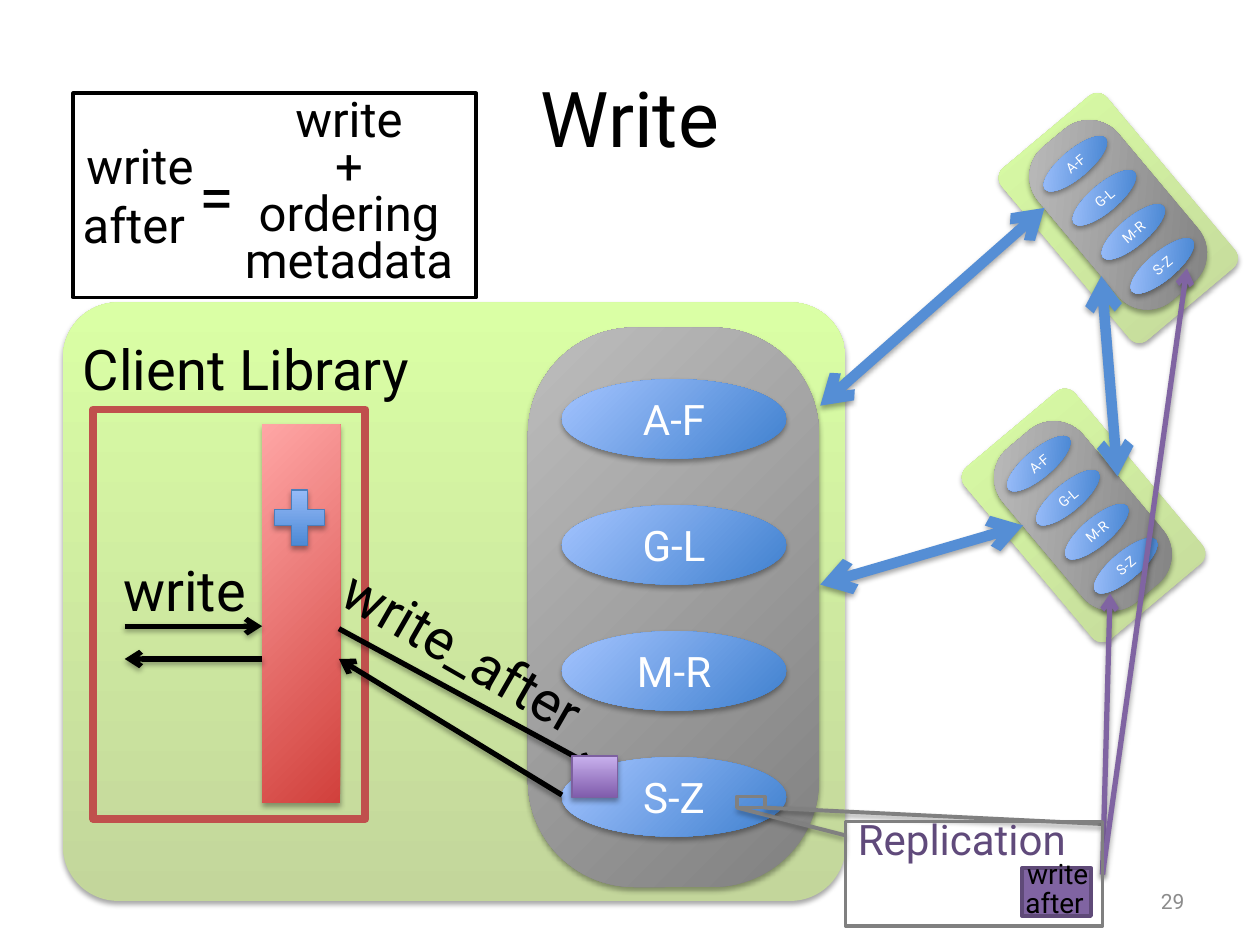
from dataclasses import dataclass

from lxml import etree
from pptx import Presentation
from pptx.dml.color import RGBColor
from pptx.enum.shapes import MSO_CONNECTOR, MSO_SHAPE
from pptx.enum.text import MSO_ANCHOR, PP_ALIGN
from pptx.oxml.ns import qn
from pptx.util import Inches, Pt

RECTANGLE, ROUNDED = MSO_SHAPE.RECTANGLE, MSO_SHAPE.ROUNDED_RECTANGLE
OVAL, PLUS = MSO_SHAPE.OVAL, MSO_SHAPE.MATH_PLUS
STRAIGHT = MSO_CONNECTOR.STRAIGHT
LEFT, CENTER, RIGHT = PP_ALIGN.LEFT, PP_ALIGN.CENTER, PP_ALIGN.RIGHT
TOP, MIDDLE = MSO_ANCHOR.TOP, MSO_ANCHOR.MIDDLE


@dataclass(frozen=True)
class Theme:
    font: str = "Roboto"
    black: str = "000000"
    white: str = "FFFFFF"
    page_gray: str = "8C8C8C"
    callout_gray: str = "808080"
    frame_red: str = "C0504D"
    link_blue: str = "558ED5"
    plus_edge: str = "4B7EBC"
    purple: str = "8064A2"
    purple_edge: str = "5F4A78"
    token_edge: str = "7D60A0"
    purple_text: str = "604A7B"
    # Gradients run from the dark end to the light end.
    green: tuple = ("C3D69B", "DAFFA5")
    gray: tuple = ("808080", "BDBDBD")
    blue: tuple = ("3F80CE", "A4C4FF")
    red: tuple = ("D1403C", "FFA6A5")
    violet: tuple = ("7F5BAB", "C8B0ED")
    title_size: int = 44
    equals_size: int = 36
    label_size: int = 32
    formula_size: int = 28
    range_size: int = 24
    token_size: int = 16
    page_size: int = 12
    small_size: int = 8


theme = Theme()
presentation = Presentation()
presentation.slide_width, presentation.slide_height = Inches(10), Inches(7.5)
slide = presentation.slides.add_slide(presentation.slide_layouts[5])


def draw(kind, box, fill=None, angle=90, line=None, width=0, shadow=False, ends=()):
    """Add a shape at left, top, width, height, or a connector between two points."""
    box = [Inches(value) for value in box]
    # Members of the two enums share integer values, so identity decides.
    if kind is STRAIGHT:
        item = slide.shapes.add_connector(kind, *box)
    else:
        item = slide.shapes.add_shape(kind, *box)
        if isinstance(fill, tuple):
            item.fill.gradient()
            item.fill.gradient_angle = angle
            for stop, color in zip(item.fill.gradient_stops, fill):
                stop.color.rgb = RGBColor.from_string(color)
        elif fill:
            item.fill.solid()
            item.fill.fore_color.rgb = RGBColor.from_string(fill)
        else:
            item.fill.background()
    if line:
        item.line.color.rgb = RGBColor.from_string(line)
        item.line.width = Pt(width)
    else:
        item.line.fill.background()
    properties = item.element.spPr
    for end in ends:
        etree.SubElement(properties.find(qn("a:ln")), qn(end), type="arrow")
    effects = etree.SubElement(properties, qn("a:effectLst"))
    if shadow:
        outer = etree.SubElement(effects, qn("a:outerShdw"), blurRad=str(Pt(3.1)),
                                 dist=str(Pt(1.8)), dir="5400000", rotWithShape="0")
        color = etree.SubElement(outer, qn("a:srgbClr"), val=theme.black)
        etree.SubElement(color, qn("a:alpha"), val="35000")
    return item


def write(frame, lines, size, color=theme.black, align=CENTER, spacing=None, anchor=TOP):
    frame.vertical_anchor = anchor
    for index, text in enumerate(lines):
        paragraph = frame.add_paragraph() if index else frame.paragraphs[0]
        paragraph.alignment = align
        if spacing:
            paragraph.line_spacing = spacing
        run = paragraph.add_run()
        run.text = text
        run.font.name, run.font.size = theme.font, Pt(size)
        run.font.color.rgb = RGBColor.from_string(color)


title = slide.shapes.title
title.left, title.top, title.width, title.height = map(Inches, (0.5, 0.3, 9, 1.25))
write(title.text_frame, ["Write"], theme.title_size, anchor=MIDDLE)

# Servers: backdrop, store, first key range, step between ranges, rotation, type size
servers = [
    ((0.5, 2.4, 6.21, 4.75), (4.19, 2.6, 2.31, 4.44), (4.46, 3.01, 1.78, 0.63),
     (0, 1), 0, theme.range_size),
    ((8.33, 0.84, 1.09, 1.78), (8.46, 0.91, 0.83, 1.59), (8.22, 1.19, 0.63, 0.22),
     (0.23, 0.27), 320, theme.small_size),
    ((8.03, 3.2, 1.14, 1.78), (8.18, 3.3, 0.83, 1.59), (7.93, 3.57, 0.63, 0.22),
     (0.23, 0.27), 320, theme.small_size),
]
for backdrop_box, store_box, (left, top, width, height), step, rotation, size in servers:
    backdrop = draw(ROUNDED, backdrop_box, theme.green, shadow=True)
    backdrop.adjustments[0] = 0.092
    store = draw(ROUNDED, store_box, theme.gray, 135, shadow=True)
    store.adjustments[0] = 0.365
    backdrop.rotation = store.rotation = rotation
    for index, key_range in enumerate(("A-F", "G-L", "M-R", "S-Z")):
        box = (left + index * step[0], top + index * step[1], width, height)
        oval = draw(OVAL, box, theme.blue, 135, shadow=True)
        oval.rotation = rotation
        frame = oval.text_frame
        frame.margin_left = frame.margin_right = frame.margin_top = frame.margin_bottom = 0
        write(frame, [key_range], size, theme.white, anchor=MIDDLE)

# Client library
draw(RECTANGLE, (2.08, 3.37, 0.62, 3), theme.red, 135, shadow=True)
draw(RECTANGLE, (0.74, 3.25, 2.16, 3.25), line=theme.frame_red, width=4.5)

one_way, two_way = ("a:tailEnd",), ("a:headEnd", "a:tailEnd")
line_groups = [
    (theme.link_blue, 6, two_way,
     [(6.51, 3.22, 8.29, 1.65), (8.87, 3.78, 8.74, 2.19), (6.51, 4.64, 8.12, 4.17)]),
    (theme.black, 3, one_way,
     [(4.46, 6.31, 2.69, 5.23), (2.08, 5.23, 0.99, 5.23),
      (0.99, 4.97, 2.08, 4.97), (2.69, 4.99, 4.72, 6.09)]),
    (theme.callout_gray, 2.25, (),
     [(6.71, 6.63, 5.85, 6.41), (8.75, 6.54, 6.07, 6.41)]),
    (theme.purple, 3, one_way,
     [(8.75, 6.94, 8.81, 4.71), (8.75, 6.94, 9.42, 2.13)]),
]
for color, width, ends, routes in line_groups:
    for route in routes:
        draw(STRAIGHT, route, line=color, width=width, shadow=True, ends=ends)

# Replication callout, formula frame and the write tokens
draw(RECTANGLE, (6.71, 6.52, 2.04, 0.83), line=theme.callout_gray, width=2)
draw(RECTANGLE, (5.85, 6.32, 0.22, 0.09), line=theme.callout_gray, width=2)
draw(RECTANGLE, (8.11, 6.89, 0.55, 0.38), theme.purple, line=theme.purple_edge, width=2)
draw(RECTANGLE, (0.58, 0.74, 3.2, 1.62), line=theme.black, width=2)
draw(PLUS, (2.11, 3.81, 0.54, 0.6), theme.blue, line=theme.plus_edge, width=0.75, shadow=True)
draw(RECTANGLE, (4.54, 6, 0.36, 0.33), theme.violet, line=theme.token_edge, width=0.75,
     shadow=True)

# Labels: box, lines, size, color, alignment, line spacing, wrap, rotation
labels = [
    ((0.56, 2.61, 3.22, 0.64), ["Client Library"], theme.label_size, theme.black,
     LEFT, None, True, 0),
    ((0.88, 4.36, 1.23, 0.64), ["write"], theme.label_size, theme.black, LEFT, None, False, 0),
    ((2.52, 4.87, 2.4, 0.64), ["write_after"], theme.label_size, theme.black,
     LEFT, None, False, 30),
    ((6.71, 6.41, 1.95, 0.5), ["Replication"], theme.range_size, theme.purple_text,
     LEFT, None, False, 0),
    ((1.76, 0.74, 2.02, 1.62), ["write", "+", "ordering", "metadata"], theme.formula_size,
     theme.black, CENTER, 0.8, True, 0),
    ((0.5, 1.03, 1.22, 1.04), ["write", "after "], theme.formula_size, theme.black,
     CENTER, None, True, 0),
    ((1.17, 1.2, 1.1, 0.71), ["="], theme.equals_size, theme.black, CENTER, None, True, 0),
    ((7.17, 6.95, 2.33, 0.4), ["29"], theme.page_size, theme.page_gray, RIGHT, None, True, 0),
]
for box, lines, size, color, align, spacing, wrap, rotation in labels:
    label = slide.shapes.add_textbox(*map(Inches, box))
    label.rotation = rotation
    label.text_frame.word_wrap = wrap
    anchor = MIDDLE if align == RIGHT else TOP
    write(label.text_frame, lines, size, color, align, spacing, anchor)

token_label = slide.shapes.add_textbox(*map(Inches, (8.04, 6.95, 0.71, 0.4)))
token_label.text_frame.word_wrap = False
write(token_label.text_frame, ["write", "after"], theme.token_size, align=LEFT)
first_line = token_label.text_frame.paragraphs[0]
first_line.alignment, first_line.line_spacing = CENTER, 0.1

presentation.save("out.pptx")
